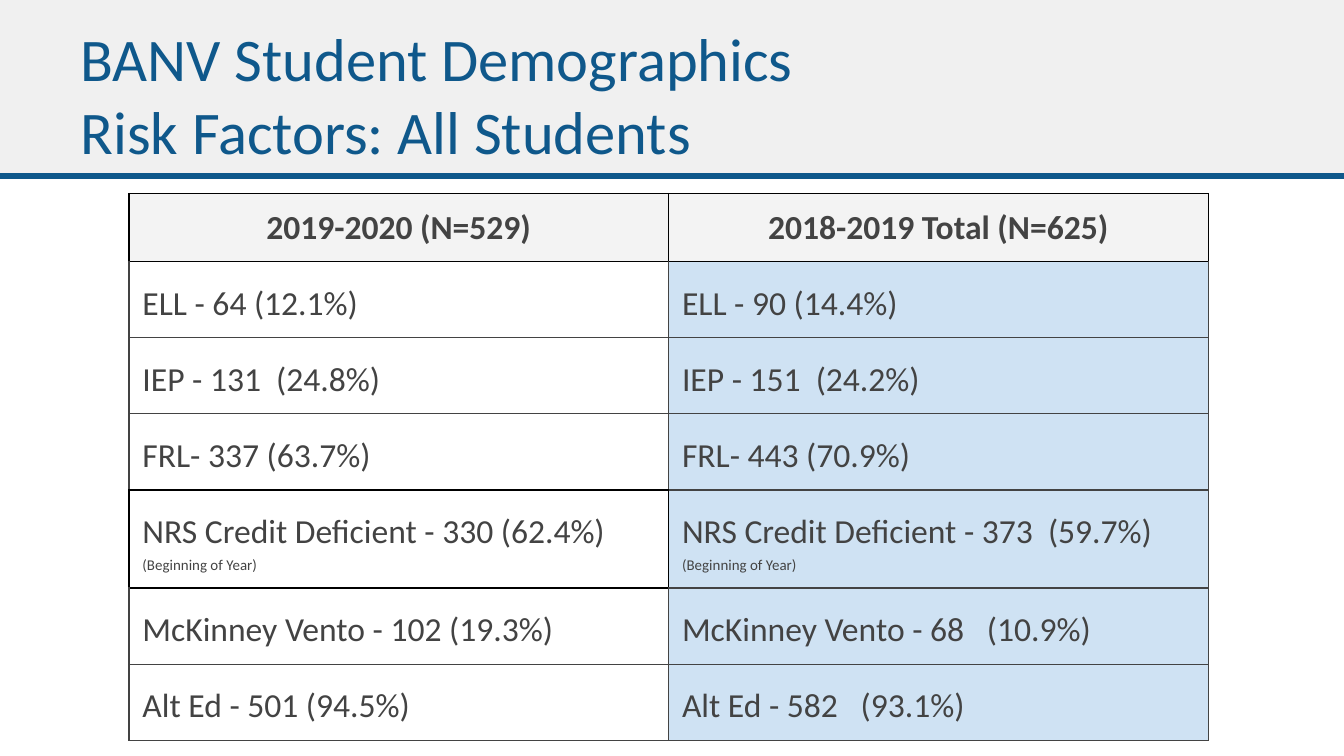
from lxml import etree
from pptx import Presentation
from pptx.dml.color import RGBColor
from pptx.enum import shapes, text
from pptx.oxml import ns
from pptx.util import Inches, Pt

COLORS = {"blue": "0F588B", "band": "F0F0F0", "header": "F3F3F3",
          "light_blue": "CFE2F3", "gray": "434343", "black": "000000"}
TITLE = ["BANV Student Demographics", "Risk Factors: All Students"]
NOTE = "(Beginning of Year)"
ROWS = [
    ("2019-2020 (N=529)", "2018-2019 Total (N=625)"),
    ("ELL - 64 (12.1%)", "ELL - 90 (14.4%)"),
    ("IEP - 131  (24.8%)", "IEP - 151  (24.2%)"),
    ("FRL- 337 (63.7%)", "FRL- 443 (70.9%)"),
    ("NRS Credit Deficient - 330 (62.4%)", "NRS Credit Deficient - 373  (59.7%)"),
    ("McKinney Vento - 102 (19.3%)", "McKinney Vento - 68   (10.9%)"),
    ("Alt Ed - 501 (94.5%)", "Alt Ed - 582   (93.1%)"),
]
NOTE_ROW = 4
HEADER_HEIGHT, ROW_HEIGHT, NOTE_HEIGHT = 0.5, 0.56, 0.72
TABLE_WIDTH = 8.03
BLACK_CELLS = {(0, 0), (0, 1), (NOTE_ROW, 0)}
EDGES = {"lnL": (0, -1), "lnR": (0, 1), "lnT": (-1, 0), "lnB": (1, 0)}


def color(name):
    return RGBColor.from_string(COLORS[name])


def write(paragraph, content, size=18, fill="gray", bold=False, align="LEFT", spacing=1.0):
    run = paragraph.add_run()
    run.text = content
    run.font.name = "Calibri"
    run.font.size = Pt(size)
    run.font.bold = bold
    run.font.color.rgb = color(fill)
    paragraph.alignment = getattr(text.PP_ALIGN, align)
    paragraph.line_spacing = spacing


def add_borders(cell, row, column):
    properties = cell._tc.get_or_add_tcPr()
    for index, (edge, (down, across)) in enumerate(EDGES.items()):
        touching = {(row, column), (row + down, column + across)}
        name = "black" if touching & BLACK_CELLS else "gray"
        line = etree.Element(ns.qn(f"a:{edge}"), w=str(Pt(0.75)))
        solid = etree.SubElement(line, ns.qn("a:solidFill"))
        etree.SubElement(solid, ns.qn("a:srgbClr"), val=COLORS[name])
        properties.insert(index, line)


def add_header(slide):
    band = slide.shapes.add_shape(shapes.MSO_SHAPE.RECTANGLE, 0, 0, Inches(10), Inches(1.31))
    band.shadow.inherit = False
    band.fill.solid()
    band.fill.fore_color.rgb = color("band")
    band.line.fill.background()
    rule = slide.shapes.add_connector(shapes.MSO_CONNECTOR.STRAIGHT,
                                      0, Inches(1.31), Inches(10), Inches(1.31))
    rule.line.color.rgb = color("blue")
    rule.line.width = Pt(3)
    etree.SubElement(rule._element.spPr, ns.qn("a:effectLst"))

    title = slide.shapes.title
    title.left, title.top = Inches(0.5), Inches(0.23)
    title.width, title.height = Inches(7.67), Inches(0.94)
    slide.shapes._spTree.append(title._element)
    frame = title.text_frame
    frame.word_wrap = True
    frame.auto_size = text.MSO_AUTO_SIZE.NONE
    frame.vertical_anchor = text.MSO_ANCHOR.MIDDLE
    frame.margin_left = frame.margin_right = Inches(0.1)
    frame.margin_top = frame.margin_bottom = Inches(0.1)
    for index, line in enumerate(TITLE):
        paragraph = frame.add_paragraph() if index else frame.paragraphs[0]
        write(paragraph, line, size=32.4, fill="blue")


def add_note(frame, column):
    if column == 0:
        paragraph = frame.paragraphs[0]
        paragraph.add_line_break()
    else:
        paragraph = frame.add_paragraph()
    write(paragraph, NOTE, size=8, spacing=1.2)


def add_risk_table(slide):
    heights = [ROW_HEIGHT] * len(ROWS)
    heights[0], heights[NOTE_ROW] = HEADER_HEIGHT, NOTE_HEIGHT
    table = slide.shapes.add_table(len(ROWS), 2, Inches(0.96), Inches(1.44),
                                   Inches(TABLE_WIDTH), Inches(sum(heights))).table
    table.first_row = table.horz_banding = False
    for row, values in enumerate(ROWS):
        table.rows[row].height = Inches(heights[row])
        for column, value in enumerate(values):
            cell = table.cell(row, column)
            cell.margin_left = cell.margin_right = Inches(0.1)
            cell.margin_top = cell.margin_bottom = Inches(0.1)
            if row == 0 or column == 1:
                cell.fill.solid()
                cell.fill.fore_color.rgb = color("light_blue" if row else "header")
            else:
                cell.fill.background()
            add_borders(cell, row, column)
            frame = cell.text_frame
            if row == 0:
                write(frame.paragraphs[0], value, bold=True, align="CENTER")
            else:
                write(frame.paragraphs[0], value, spacing=1.2)
            if row == NOTE_ROW:
                add_note(frame, column)


def main():
    presentation = Presentation()
    presentation.slide_width = Inches(10)
    presentation.slide_height = Inches(10 * 9 / 16)
    slide = presentation.slides.add_slide(presentation.slide_layouts[5])
    add_header(slide)
    add_risk_table(slide)
    presentation.save("out.pptx")


if __name__ == "__main__":
    main()
